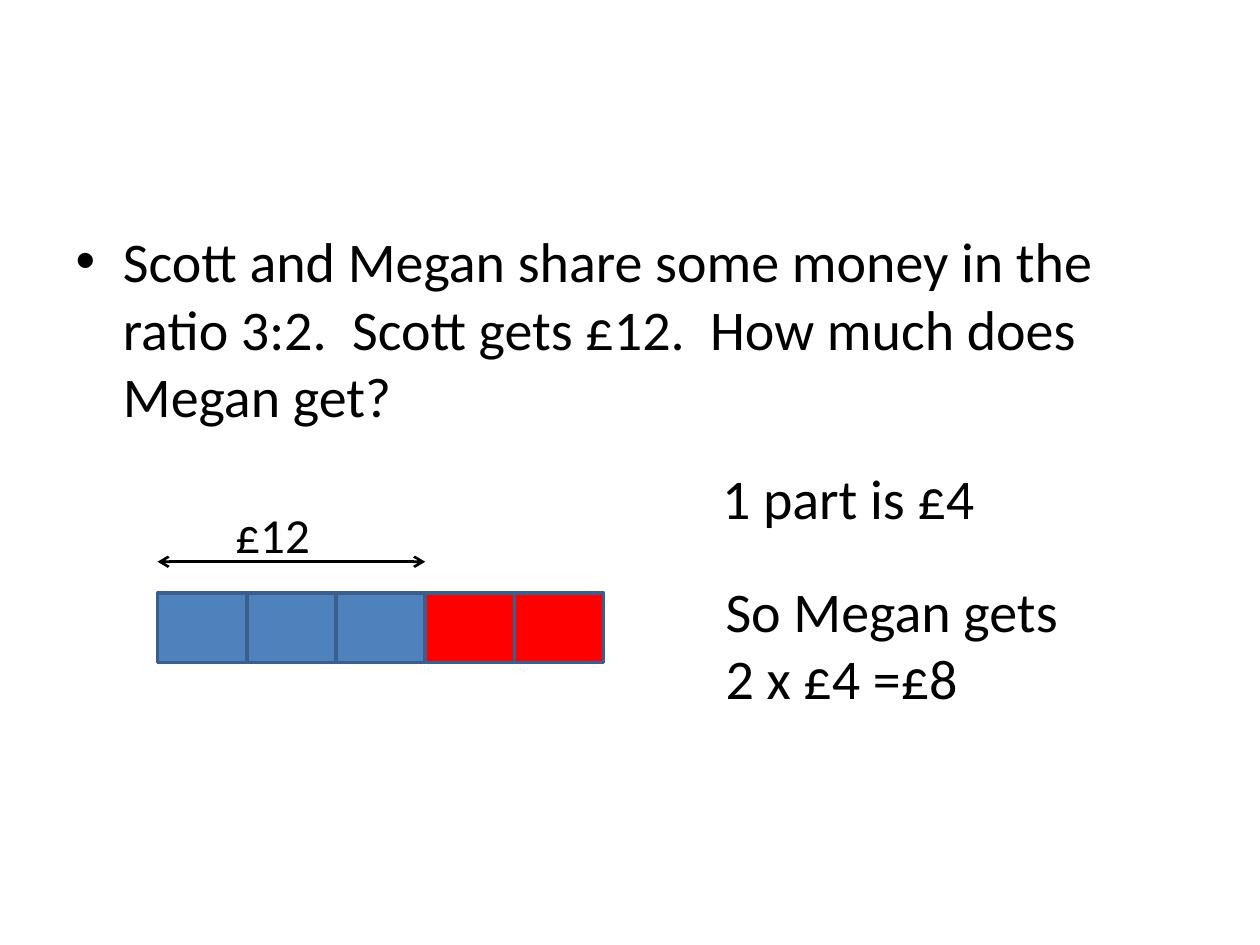
from lxml import etree
from pptx import Presentation
from pptx.dml.color import RGBColor
from pptx.enum.shapes import MSO_CONNECTOR, MSO_SHAPE
from pptx.oxml.ns import qn
from pptx.util import Pt

RECTANGLE = MSO_SHAPE.RECTANGLE
STRAIGHT = MSO_CONNECTOR.STRAIGHT

# Content
COLOURS = {"scott": "4F81BD", "megan": "FF0000", "outline": "3A5F8C", "ink": "000000"}
QUESTION = ("Scott and Megan share some money in the ratio 3:2.  "
            "Scott gets £12.  How much does Megan get?")
SHARES = [("scott", 3), ("megan", 2)]
LABELS = [  # left, top, width, height, text size, lines
    (127.5, 284.5, 78, 41, 28, ["£12"]),
    (405.5, 261.5, 209.5, 46, 32, ["1 part is £4"]),
    (407.5, 326, 209.5, 85, 32, ["So Megan gets", "2 x £4 =£8"]),
]

# Bar model measures
BAR_LEFT, BAR_TOP, PART_WIDTH, PART_HEIGHT = 90, 339, 51, 39.5
ARROW_TOP = 321


def colour(name):
    return RGBColor.from_string(COLOURS[name])


def write(frame, lines, size):
    frame.word_wrap = True
    for index, line in enumerate(lines):
        para = frame.paragraphs[0] if index == 0 else frame.add_paragraph()
        span = para.add_run()
        span.text = line
        for key, value in {"name": "Calibri", "size": Pt(size)}.items():
            setattr(span.font, key, value)
        span.font.color.rgb = colour("ink")


deck = Presentation()
deck.slide_width, deck.slide_height = Pt(720), Pt(540)
page = deck.slides.add_slide(deck.slide_layouts[1])

# Question in the body placeholder; no title
title = page.shapes.title
title.element.getparent().remove(title.element)
body = page.placeholders[1]
for key, value in {"left": 36, "top": 126, "width": 648, "height": 356.4}.items():
    setattr(body, key, Pt(value))
write(body.text_frame, [QUESTION], 32)

# Bar model: one box for each part of the ratio
owners = [owner for owner, count in SHARES for _ in range(count)]
for index, owner in enumerate(owners):
    box = page.shapes.add_shape(RECTANGLE, Pt(BAR_LEFT + index * PART_WIDTH), Pt(BAR_TOP),
                                Pt(PART_WIDTH), Pt(PART_HEIGHT))
    box.shadow.inherit = False
    box.fill.solid()
    box.fill.fore_color.rgb = colour(owner)
    box.line.color.rgb = colour("outline")
    box.line.width = Pt(2)

# Double arrow over Scott's parts
arrow_end = BAR_LEFT + SHARES[0][1] * PART_WIDTH
arrow = page.shapes.add_connector(STRAIGHT, Pt(BAR_LEFT), Pt(ARROW_TOP),
                                  Pt(arrow_end), Pt(ARROW_TOP))
arrow.line.color.rgb = colour("ink")
arrow.line.width = Pt(1.5)
for end in ("a:headEnd", "a:tailEnd"):
    etree.SubElement(arrow.line._get_or_add_ln(), qn(end), type="arrow")
etree.SubElement(arrow.element.spPr, qn("a:effectLst"))

# Amount and working
for left, top, width, height, size, lines in LABELS:
    label = page.shapes.add_textbox(Pt(left), Pt(top), Pt(width), Pt(height))
    write(label.text_frame, lines, size)

deck.save("out.pptx")
